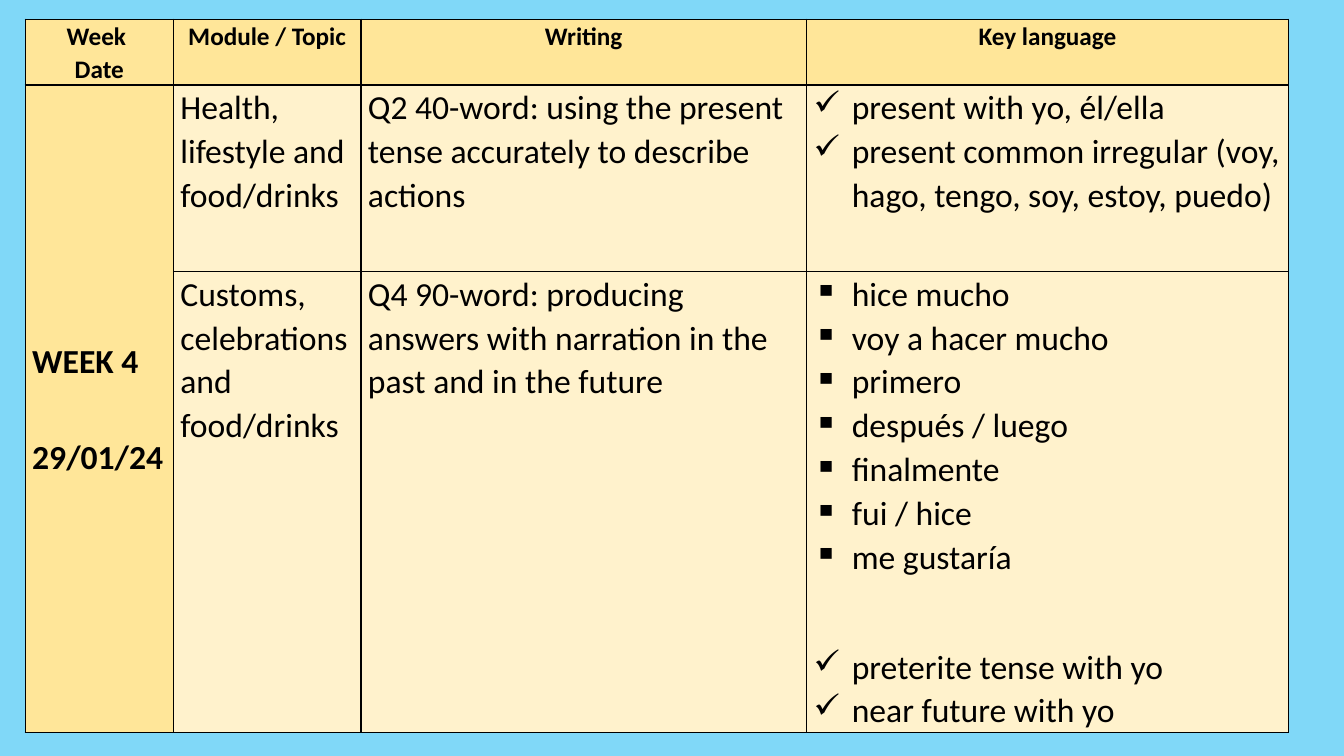
from lxml import etree
from pptx import Presentation
from pptx.dml.color import RGBColor
from pptx.enum.text import MSO_ANCHOR, PP_ALIGN
from pptx.oxml.ns import qn
from pptx.util import Inches, Pt

CENTER, LEFT = PP_ALIGN.CENTER, PP_ALIGN.LEFT
TOP, MIDDLE = MSO_ANCHOR.TOP, MSO_ANCHOR.MIDDLE
FONT = "Calibri"
SKY, GOLD, CREAM, BLACK = "80D8F8", "FFE699", "FFF2CC", "000000"
TICK, SQUARE = "✓", "▪"

COLUMN_WIDTHS = [1.47, 1.86, 4.42, 4.78]
ROW_HEIGHTS = [0.65, 1.85, 4.57]
HEADINGS = ["Week \vDate", "Module / Topic", "Writing", "Key language"]
WEEK = ["WEEK 4", "29/01/24"]
LESSONS = [
    ("Health, lifestyle and food/drinks",
     "Q2 40-word: using the present tense accurately to describe actions",
     [(TICK, ["present with yo, él/ella",
              "present common irregular (voy, hago, tengo, soy, estoy, puedo)"])]),
    ("Customs, celebrations and food/drinks",
     "Q4 90-word: producing answers with narration in the past and in the future",
     [(SQUARE, ["hice mucho", "voy a hacer mucho", "primero", "después / luego",
                "finalmente", "fui / hice", "me gustaría"]),
      (TICK, ["preterite tense with yo", "near future with yo"])]),
]


def color(value):
    return RGBColor.from_string(value)


class Planner:
    """Holds the style and the current page."""

    def __init__(self, deck):
        self.page = deck.slides.add_slide(deck.slide_layouts[6])
        fill = self.page.background.fill
        fill.solid()
        fill.fore_color.rgb = color(SKY)

    def table(self, left, top, widths, heights):
        frame = self.page.shapes.add_table(
            len(heights), len(widths), Inches(left), Inches(top),
            Inches(sum(widths)), Inches(sum(heights)))
        table = frame.table
        table.first_row = table.horz_banding = False
        for column, width in zip(table.columns, widths):
            column.width = Inches(width)
        for row, height in zip(table.rows, heights):
            row.height = Inches(height)
        return table

    def cell(self, cell, fill, anchor=TOP):
        layout = {"margin_left": Inches(0.07), "margin_right": Inches(0.07),
                  "margin_top": 0, "margin_bottom": 0, "vertical_anchor": anchor}
        for name, value in layout.items():
            setattr(cell, name, value)
        self.borders(cell)
        cell.fill.solid()
        cell.fill.fore_color.rgb = color(fill)

    def borders(self, cell):
        properties = cell._tc.get_or_add_tcPr()
        for side in ("a:lnL", "a:lnR", "a:lnT", "a:lnB"):
            line = etree.SubElement(properties, qn(side), w=str(Pt(1)))
            solid = etree.SubElement(line, qn("a:solidFill"))
            etree.SubElement(solid, qn("a:srgbClr"), val=BLACK)

    def text(self, cell, words, size=24, bold=False, align=LEFT,
             bullet=None, before=0, after=8):
        frame = cell.text_frame
        para = frame.paragraphs[0]
        if para.runs:
            para = frame.add_paragraph()
        para.text = words
        if bullet:
            properties = para._p.get_or_add_pPr()
            properties.set("marL", str(Inches(0.38)))
            properties.set("indent", str(-Inches(0.38)))
            etree.SubElement(properties, qn("a:buChar"), char=bullet)
        spacing = {"alignment": align, "line_spacing": 1.07, "space_after": Pt(after)}
        if before:
            spacing["space_before"] = Pt(before)
        for name, value in spacing.items():
            setattr(para, name, value)
        for span in para.runs:
            for name, value in {"name": FONT, "size": Pt(size), "bold": bold}.items():
                setattr(span.font, name, value)
            span.font.color.rgb = color(BLACK)

    def bullets(self, cell, groups):
        for group, (mark, items) in enumerate(groups):
            for number, item in enumerate(items):
                self.text(cell, item, bullet=mark,
                          before=39 if group and number == 0 else 0,
                          after=8 if number == len(items) - 1 else 0)


def main():
    deck = Presentation()
    deck.slide_width, deck.slide_height = Inches(13.33), Inches(7.5)
    planner = Planner(deck)
    table = planner.table(0.25, 0.19, COLUMN_WIDTHS, ROW_HEIGHTS)

    # Heading row
    for column, heading in enumerate(HEADINGS):
        cell = table.cell(0, column)
        planner.cell(cell, GOLD)
        planner.text(cell, heading, size=18, bold=True, align=CENTER)

    # Week column, merged over both lessons
    for row in (1, 2):
        planner.cell(table.cell(row, 0), GOLD, MIDDLE)
    week_cell = table.cell(1, 0)
    week_cell.merge(table.cell(2, 0))
    for words, after in zip(WEEK, (37, 8)):
        planner.text(week_cell, words, bold=True, after=after)

    # Lessons
    for row, (topic, writing, language) in enumerate(LESSONS, start=1):
        for column in (1, 2, 3):
            planner.cell(table.cell(row, column), CREAM)
        planner.text(table.cell(row, 1), topic)
        planner.text(table.cell(row, 2), writing)
        planner.bullets(table.cell(row, 3), language)

    deck.save("out.pptx")


if __name__ == "__main__":
    main()
